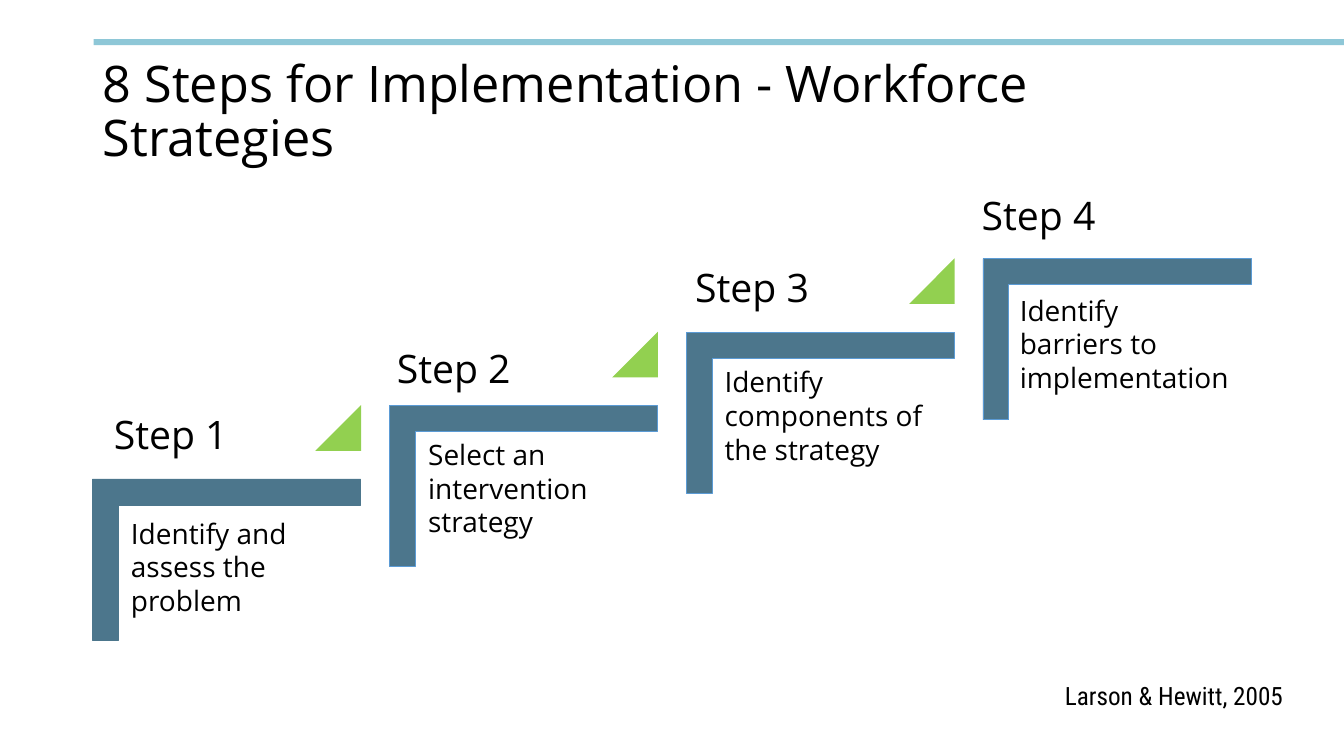
from pptx import Presentation
from pptx.dml.color import RGBColor
from pptx.enum import shapes, text
from pptx.util import Cm, Pt

COLORS = {
    "rule": "8EC7D7",
    "stair": "4C768C",
    "stair_edge": "5B9BD5",
    "triangle": "92D050",
    "text": "000000",
}


def add_text(parent, box, wording, size, font="Open Sans"):
    frame = parent.add_textbox(*[Cm(length) for length in box]).text_frame
    frame.word_wrap = True
    frame.text = wording
    for run in frame.paragraphs[0].runs:
        run.font.size = Pt(size)
        run.font.name = font
        run.font.color.rgb = RGBColor.from_string(COLORS["text"])
    return frame


def add_filled(parent, preset, box, color):
    shape = parent.add_shape(preset, *[Cm(length) for length in box])
    shape.shadow.inherit = False
    shape.fill.solid()
    shape.fill.fore_color.rgb = RGBColor.from_string(COLORS[color])
    shape.line.fill.background()
    return shape


prs = Presentation()
prs.slide_width, prs.slide_height = Cm(33.87), Cm(19.05)
slide = prs.slides.add_slide(prs.slide_layouts[6])

add_filled(slide.shapes, shapes.MSO_SHAPE.RECTANGLE, (2.36, 0.99, 31.51, 0.15), "rule")
title = add_text(slide.shapes, (2.34, 1.02, 29.21, 3.68),
                 "8 Steps for Implementation - Workforce Strategies", 36)
title.vertical_anchor = text.MSO_ANCHOR.MIDDLE
title.paragraphs[0].line_spacing = 0.9
citation = add_text(slide.shapes, (25.5, 17.02, 7.09, 1.02),
                    "Larson & Hewitt, 2005", 18, "Roboto Condensed")
citation.paragraphs[0].alignment = text.PP_ALIGN.RIGHT

# Label position, description position and width, description, edge colour
steps = [
    ((2.62, 10.21), (3.05, 12.88, 5.82), "Identify and assess the problem", "stair"),
    ((9.75, 8.56), (10.54, 10.9, 5.82), "Select an intervention strategy", "stair_edge"),
    ((17.27, 6.5), (18.01, 9.07, 6.35), "Identify components of the strategy", "stair_edge"),
    ((24.49, 4.7), (25.45, 7.26, 6.07), "Identify\vbarriers to implementation", "stair_edge"),
]
STEP_RIGHT, STEP_UP = 7.48, 1.85

for index, (label_at, (left, top, width), description, edge) in enumerate(steps):
    step = slide.shapes.add_group_shape().shapes
    across, up = index * STEP_RIGHT, index * STEP_UP

    stair = add_filled(step, shapes.MSO_SHAPE.CORNER,
                       (3.68 + across, 10.72 - up, 4.06, 6.76), "stair")
    stair.rotation = 90
    stair.adjustments[0] = stair.adjustments[1] = 0.161
    stair.line.color.rgb = RGBColor.from_string(COLORS[edge])
    stair.line.width = Pt(0.5)

    if index < len(steps) - 1:
        triangle = add_filled(step, shapes.MSO_SHAPE.ISOSCELES_TRIANGLE,
                              (7.95 + across, 10.21 - up, 1.15, 1.15), "triangle")
        triangle.adjustments[0] = 1

    add_text(step, (*label_at, 5.33, 1.45), f"Step {index + 1}", 28)
    add_text(step, (left, top, width, 2.82), description, 20)

prs.save("out.pptx")
